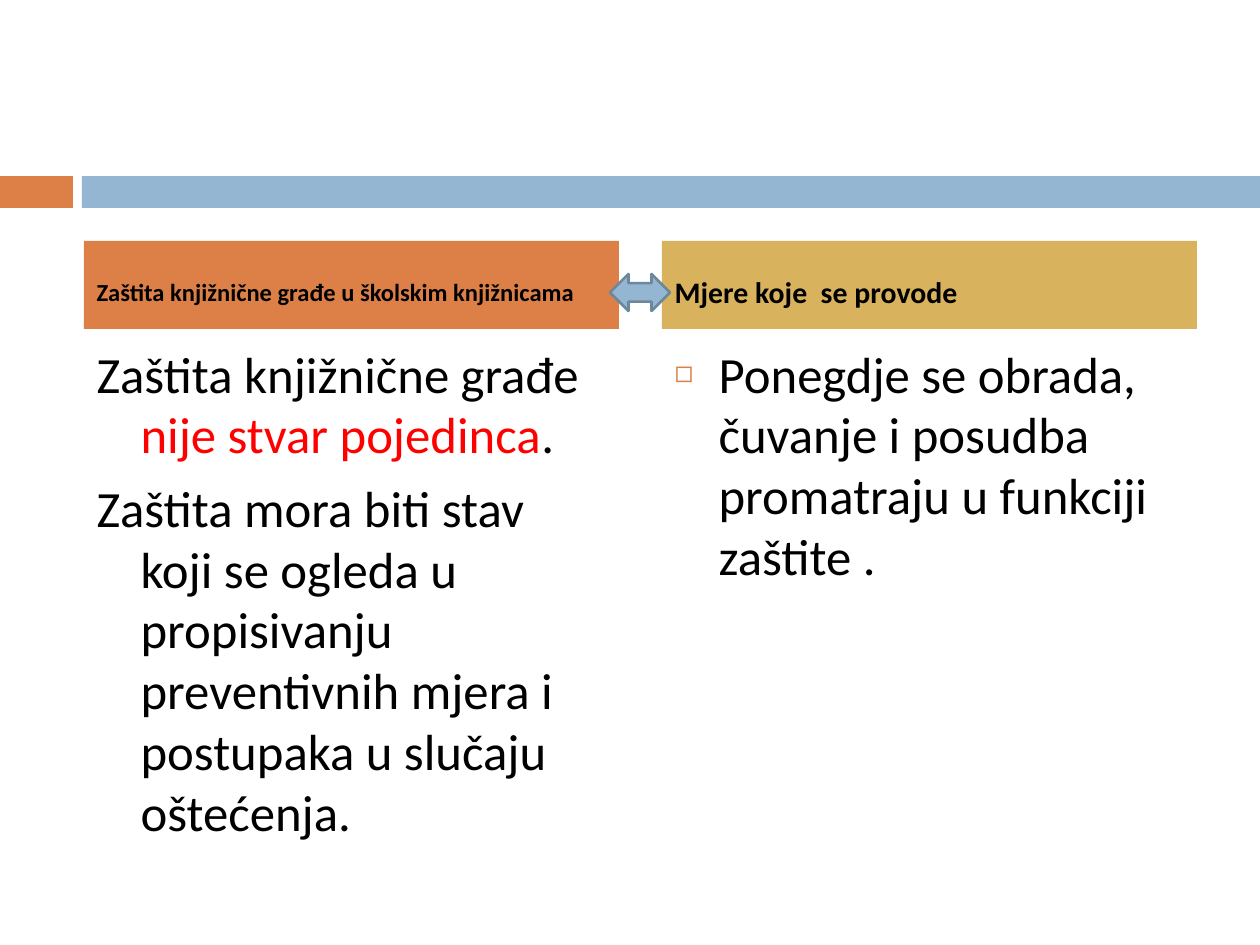
"""Build the slide on protecting library holdings in school libraries."""
from lxml import etree
from pptx import Presentation
from pptx.dml.color import RGBColor
from pptx.enum.shapes import MSO_SHAPE
from pptx.enum.text import MSO_ANCHOR, MSO_AUTO_SIZE
from pptx.oxml.ns import qn
from pptx.util import Pt

RECTANGLE = MSO_SHAPE.RECTANGLE
DOUBLE_ARROW = MSO_SHAPE.LEFT_RIGHT_ARROW
MIDDLE = MSO_ANCHOR.MIDDLE
NO_AUTOFIT = MSO_AUTO_SIZE.NONE

ORANGE = RGBColor(0xDD, 0x80, 0x47)
BLUE = RGBColor(0x94, 0xB6, 0xD2)
GOLD = RGBColor(0xD8, 0xB2, 0x5C)
SLATE = RGBColor(0x6D, 0x87, 0x9B)
BLACK = RGBColor(0, 0, 0)
RED = RGBColor(0xFF, 0, 0)

PX = 914400 / 126
FONT = "Calibri"
COLUMN_WIDTH = 535
HANGING = 44


def place(shape, left, top, width, height):
    shape.left, shape.top = round(left * PX), round(top * PX)
    shape.width, shape.height = round(width * PX), round(height * PX)


def add_filled(kind, box, color):
    shape = slide.shapes.add_shape(kind, *(round(length * PX) for length in box))
    shape.shadow.inherit = False
    shape.fill.solid()
    shape.fill.fore_color.rgb = color
    shape.line.fill.background()
    return shape


prs = Presentation()
prs.slide_width, prs.slide_height = round(1260 * PX), round(945 * PX)
slide = prs.slides.add_slide(prs.slide_layouts[4])
title = slide.shapes.title
title.element.getparent().remove(title.element)

add_filled(RECTANGLE, (0, 176, 73, 32), ORANGE)
add_filled(RECTANGLE, (82, 176, 1178, 32), BLUE)

columns = [
    (84, 1, ORANGE, 14, "Zaštita knjižnične građe u školskim knjižnicama", False, [
        [("Zaštita knjižnične građe ", BLACK), ("nije stvar pojedinca", RED), (".", BLACK)],
        [("Zaštita mora biti stav koji se ogleda u propisivanju preventivnih mjera "
          "i postupaka u slučaju oštećenja.", BLACK)],
    ]),
    (662, 3, GOLD, 17, "Mjere koje  se provode", True, [
        [("Ponegdje se obrada, čuvanje i posudba promatraju u funkciji zaštite .", BLACK)],
    ]),
]

for left, index, color, size, heading_text, bulleted, points in columns:
    heading = slide.placeholders[index]
    place(heading, left, 241, COLUMN_WIDTH, 88)
    heading.fill.solid()
    heading.fill.fore_color.rgb = color
    frame = heading.text_frame
    frame.text = heading_text
    frame.auto_size = NO_AUTOFIT
    frame.vertical_anchor = MIDDLE
    frame.margin_top = round(20 * PX)
    line = frame.paragraphs[0]
    line.space_before = Pt(0)
    line.font.name, line.font.size, line.font.bold = FONT, Pt(size), True
    line.font.color.rgb = BLACK

    body = slide.placeholders[index + 1]
    place(body, left, 336, COLUMN_WIDTH, 494)
    frame = body.text_frame
    frame.auto_size = NO_AUTOFIT
    for number, parts in enumerate(points):
        point = frame.add_paragraph() if number else frame.paragraphs[0]
        point.space_before = Pt(7)
        point.font.name, point.font.size = FONT, Pt(29)
        for text, text_color in parts:
            run = point.add_run()
            run.text = text
            run.font.color.rgb = text_color
        properties = point._p.get_or_add_pPr()
        properties.set("marL", str(round(HANGING * PX)))
        properties.set("indent", str(round(-HANGING * PX)))
        if bulleted:
            bullet_color = etree.SubElement(properties, qn("a:buClr"))
            etree.SubElement(bullet_color, qn("a:srgbClr"), val=str(ORANGE))
            etree.SubElement(properties, qn("a:buSzPct"), val="60000")
            etree.SubElement(properties, qn("a:buChar"), char="◻")
        else:
            etree.SubElement(properties, qn("a:buNone"))

link = add_filled(DOUBLE_ARROW, (610, 274, 60, 37), BLUE)
link.line.color.rgb = SLATE
link.line.width = Pt(1.5)

prs.save("out.pptx")
